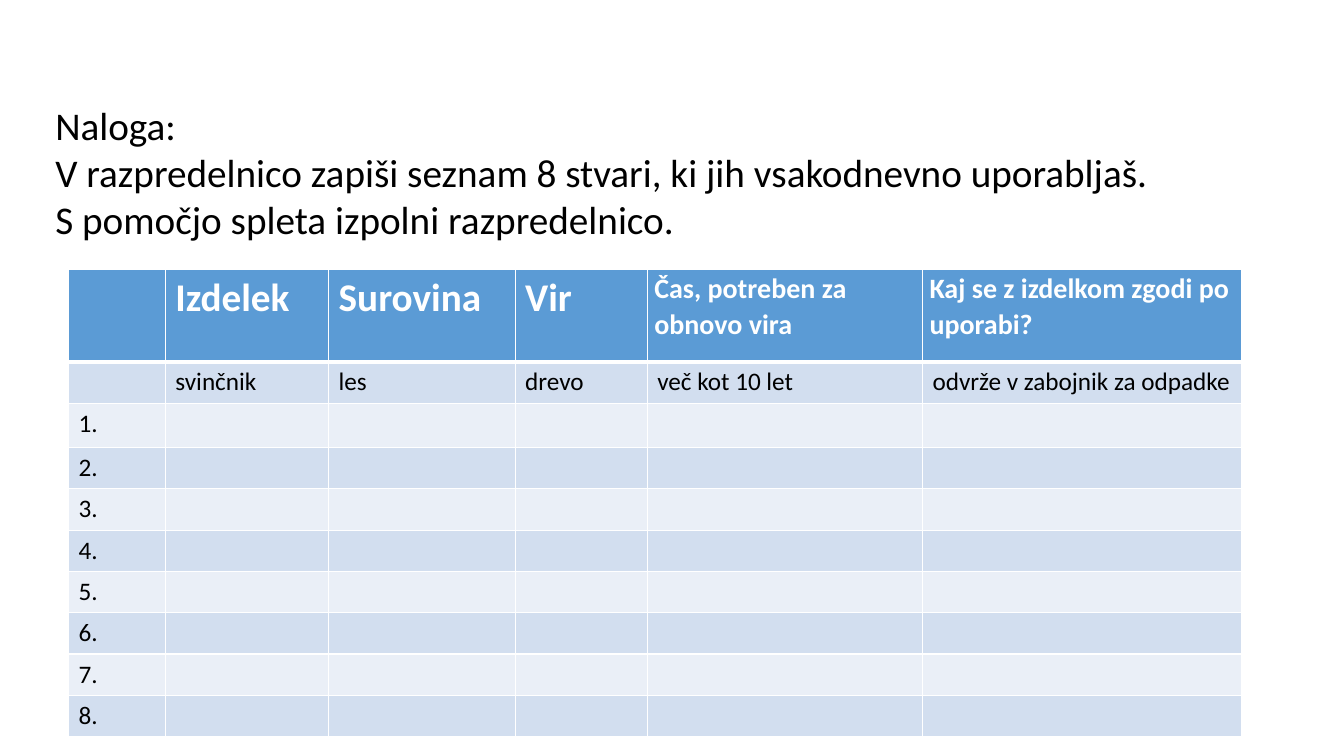
from lxml import etree
from pptx import Presentation
from pptx.dml.color import RGBColor
from pptx.enum.text import MSO_ANCHOR
from pptx.oxml.ns import qn
from pptx.util import Inches, Pt

MIDDLE = MSO_ANCHOR.MIDDLE
FONT = "Calibri"
COLORS = {
    "text": "000000",
    "header": "5B9BD5",
    "header_text": "FFFFFF",
    "dark_band": "D2DEEF",
    "light_band": "EAEFF7",
    "border": "FFFFFF",
}
SLIDE_WIDTH, SLIDE_HEIGHT = 13.33, 7.5

TASK = [
    "Naloga:",
    "V razpredelnico zapiši seznam 8 stvari, ki jih vsakodnevno uporabljaš.",
    "S pomočjo spleta izpolni razpredelnico.",
]
HEADERS = ["", "Izdelek", "Surovina", "Vir",
           "Čas, potreben za obnovo vira", "Kaj se z izdelkom zgodi po uporabi?"]
EXAMPLE = ["", "svinčnik", "les", "drevo", "več kot 10 let",
           "odvrže v zabojnik za odpadke"]
ITEM_COUNT = 8
LONG_HEADERS_FROM = 4

COLUMN_WIDTHS = [0.96, 1.62, 1.85, 1.31, 2.73, 3.17]
HEADER_HEIGHT, ROW_HEIGHT, FIRST_ITEM_HEIGHT = 0.92, 0.41, 0.44


def add_span(para, text, size, color, bold=False):
    span = para.add_run()
    span.text = text
    span.font.name = FONT
    span.font.size = Pt(size)
    span.font.bold = bold
    span.font.color.rgb = RGBColor.from_string(COLORS[color])


def add_task(page, left, top, width, height):
    box = page.shapes.add_textbox(*map(Inches, (left, top, width, height)))
    frame = box.text_frame
    frame.word_wrap = True
    frame.vertical_anchor = MIDDLE
    for index, line in enumerate(TASK):
        para = frame.add_paragraph() if index else frame.paragraphs[0]
        add_span(para, line, 28, "text")


def set_borders(cell, bottom, top):
    """Draw the four cell edges; they must come before the fill in the XML."""
    properties = cell._tc.get_or_add_tcPr()
    edges = {"lnL": 1, "lnR": 1, "lnT": top, "lnB": bottom}
    for index, (edge, points) in enumerate(edges.items()):
        line = etree.Element(qn(f"a:{edge}"), w=str(Pt(points)))
        fill = etree.SubElement(line, qn("a:solidFill"))
        etree.SubElement(fill, qn("a:srgbClr"), val=COLORS["border"])
        properties.insert(index, line)


def fill_cell(cell, row, column, text):
    is_header = row == 0
    is_long_header = is_header and column >= LONG_HEADERS_FROM
    band = "header" if is_header else "dark_band" if row % 2 else "light_band"
    cell.fill.solid()
    cell.fill.fore_color.rgb = RGBColor.from_string(COLORS[band])
    set_borders(cell, bottom=3 if is_header else 1, top=3 if row == 1 else 1)

    para = cell.text_frame.paragraphs[0]
    if is_long_header:
        cell.margin_left = cell.margin_right = Inches(0.07)
        cell.margin_top = cell.margin_bottom = 0
        para.line_spacing = 1.07
    if text and is_header:
        add_span(para, text, 20 if is_long_header else 28, "header_text", bold=True)
    elif text:
        add_span(para, text, 18, "text")


def add_worksheet(page, left, top):
    blanks = [""] * (len(HEADERS) - 1)
    items = [[f"{number}.", *blanks] for number in range(1, ITEM_COUNT + 1)]
    rows = [HEADERS, EXAMPLE, *items]
    heights = [HEADER_HEIGHT, ROW_HEIGHT, FIRST_ITEM_HEIGHT]
    heights += [ROW_HEIGHT] * (len(rows) - len(heights))
    table = page.shapes.add_table(
        len(rows), len(HEADERS), Inches(left), Inches(top),
        Inches(sum(COLUMN_WIDTHS)), Inches(sum(heights))).table
    for column, width in zip(table.columns, COLUMN_WIDTHS):
        column.width = Inches(width)
    for row, (texts, height) in enumerate(zip(rows, heights)):
        table.rows[row].height = Inches(height)
        for column, text in enumerate(texts):
            fill_cell(table.cell(row, column), row, column, text)


def main():
    deck = Presentation()
    deck.slide_width, deck.slide_height = Inches(SLIDE_WIDTH), Inches(SLIDE_HEIGHT)
    page = deck.slides.add_slide(deck.slide_layouts[6])
    add_task(page, 0.45, 0.95, 11.59, 1.51)
    add_worksheet(page, 0.68, 2.67)
    deck.save("out.pptx")


if __name__ == "__main__":
    main()
